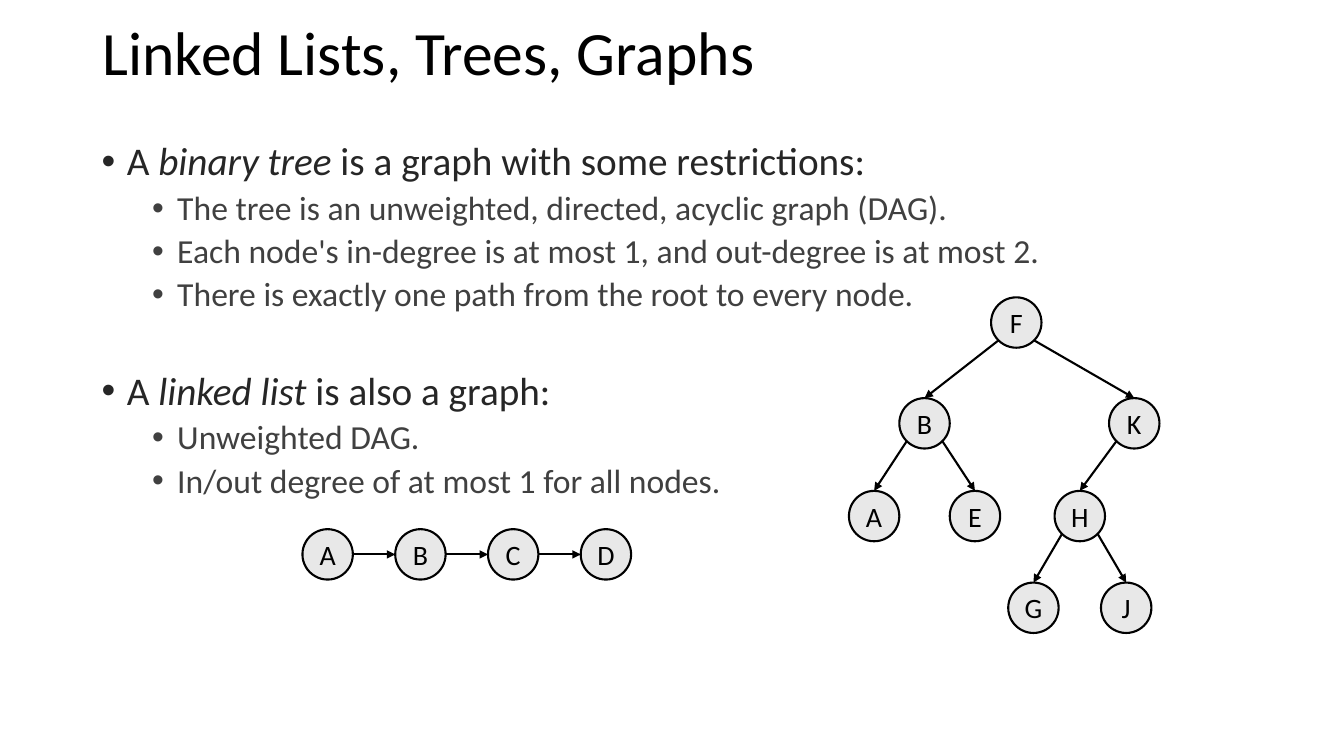
from dataclasses import dataclass
from math import sqrt

from lxml import etree
from pptx import Presentation
from pptx import util as u
from pptx.dml.color import RGBColor
from pptx.enum import shapes, text
from pptx.oxml import ns


@dataclass(frozen=True)
class Theme:
    font: str = "Calibri"
    black: str = "000000"
    node_fill: str = "E8E8E8"
    body_colors: tuple = ("262626", "404040")
    body_sizes: tuple = (28, 24)
    title_size: int = 44
    node_size: int = 20
    line_width: float = 1.5
    node_diameter: float = 0.5


class GraphSlide:
    """Draws text, nodes and arrows on one page in one theme."""

    def __init__(self, page, theme):
        self.page = page
        self.theme = theme

    def style(self, para, size, color):
        para.font.name = self.theme.font
        para.font.size = u.Pt(size)
        para.font.color.rgb = RGBColor.from_string(color)

    def text_box(self, left, top, width, height, anchor):
        box = self.page.shapes.add_textbox(*map(u.Inches, (left, top, width, height)))
        frame = box.text_frame
        frame.word_wrap = True
        frame.vertical_anchor = anchor
        return frame

    def title(self, words):
        frame = self.text_box(0.92, 0.13, 11.5, 0.84, text.MSO_ANCHOR.MIDDLE)
        para = frame.paragraphs[0]
        para.text = words
        para.line_spacing = 0.9
        self.style(para, self.theme.title_size, self.theme.black)

    def bullets(self, items):
        frame = self.text_box(0.91, 1.36, 10, 6.08, text.MSO_ANCHOR.TOP)
        for index, (level, space, spans) in enumerate(items):
            para = frame.add_paragraph() if index else frame.paragraphs[0]
            para.level = level
            para.line_spacing = 0.9
            para.space_before = u.Pt(space)
            properties = para._p.get_or_add_pPr()
            properties.set("marL", str(u.Inches(0.25 + 0.5 * level)))
            properties.set("indent", str(u.Inches(-0.25)))
            etree.SubElement(properties, ns.qn("a:buFont"), typeface="Arial")
            etree.SubElement(properties, ns.qn("a:buChar"), char="•")
            self.style(para, self.theme.body_sizes[level], self.theme.body_colors[level])
            for position, words in enumerate(spans):
                span = para.add_run()
                span.text = words
                if position == 1:
                    span.font.italic = True

    def node(self, label, left, top):
        size = u.Inches(self.theme.node_diameter)
        circle = self.page.shapes.add_shape(
            shapes.MSO_SHAPE.OVAL, u.Inches(left), u.Inches(top), size, size)
        circle.shadow.inherit = False
        circle.fill.solid()
        circle.fill.fore_color.rgb = RGBColor.from_string(self.theme.node_fill)
        circle.line.color.rgb = RGBColor.from_string(self.theme.black)
        circle.line.width = u.Pt(self.theme.line_width)
        frame = circle.text_frame
        frame.word_wrap = False
        frame.vertical_anchor = text.MSO_ANCHOR.MIDDLE
        para = frame.paragraphs[0]
        para.text = label
        para.alignment = text.PP_ALIGN.CENTER
        self.style(para, self.theme.node_size, self.theme.black)

    def arrow(self, start, end):
        line = self.page.shapes.add_connector(
            shapes.MSO_CONNECTOR.STRAIGHT, *map(u.Inches, (*start, *end)))
        line.line.color.rgb = RGBColor.from_string(self.theme.black)
        line.line.width = u.Pt(self.theme.line_width)
        etree.SubElement(line.line._get_or_add_ln(), ns.qn("a:tailEnd"), type="triangle")
        etree.SubElement(line._element.spPr, ns.qn("a:effectLst"))

    def tree(self, places, edges):
        radius = self.theme.node_diameter / 2
        diagonal = radius / sqrt(2)
        for parent, child in edges:
            (left, top), (child_left, child_top) = places[parent], places[child]
            side = diagonal if child_left > left else -diagonal
            self.arrow((left + radius + side, top + radius + diagonal),
                       (child_left + radius, child_top))
        for label, place in places.items():
            self.node(label, *place)

    def linked_list(self, labels, left, top, step):
        diameter = self.theme.node_diameter
        middle = top + diameter / 2
        for index, label in enumerate(labels):
            node_left = left + index * step
            if index:
                self.arrow((node_left - step + diameter, middle), (node_left, middle))
            self.node(label, node_left, top)


BULLETS = [
    (0, 0, ["A ", "binary tree", " is a graph with some restrictions:"]),
    (1, 5, ["The tree is an unweighted, directed, acyclic graph (DAG)."]),
    (1, 5, ["Each node's in-degree is at most 1, and out-degree is at most 2."]),
    (1, 5, ["There is exactly one path from the root to every node."]),
    (0, 41, ["A ", "linked list", " is also a graph:"]),
    (1, 5, ["Unweighted DAG."]),
    (1, 5, ["In/out degree of at most 1 for all nodes."]),
]
TREE_PLACES = {
    "F": (9.83, 2.95),
    "B": (8.92, 3.95), "K": (11, 3.95),
    "A": (8.42, 4.87), "E": (9.42, 4.87), "H": (10.46, 4.87),
    "G": (10, 5.78), "J": (10.92, 5.78),
}
TREE_EDGES = ["FB", "FK", "BA", "BE", "KH", "HG", "HJ"]


def main():
    deck = Presentation()
    deck.slide_width, deck.slide_height = u.Inches(13.33), u.Inches(7.5)
    slide = GraphSlide(deck.slides.add_slide(deck.slide_layouts[6]), Theme())
    slide.title("Linked Lists, Trees, Graphs")
    slide.bullets(BULLETS)
    slide.tree(TREE_PLACES, TREE_EDGES)
    slide.linked_list("ABCD", 3, 5.25, 0.92)
    deck.save("out.pptx")


if __name__ == "__main__":
    main()
